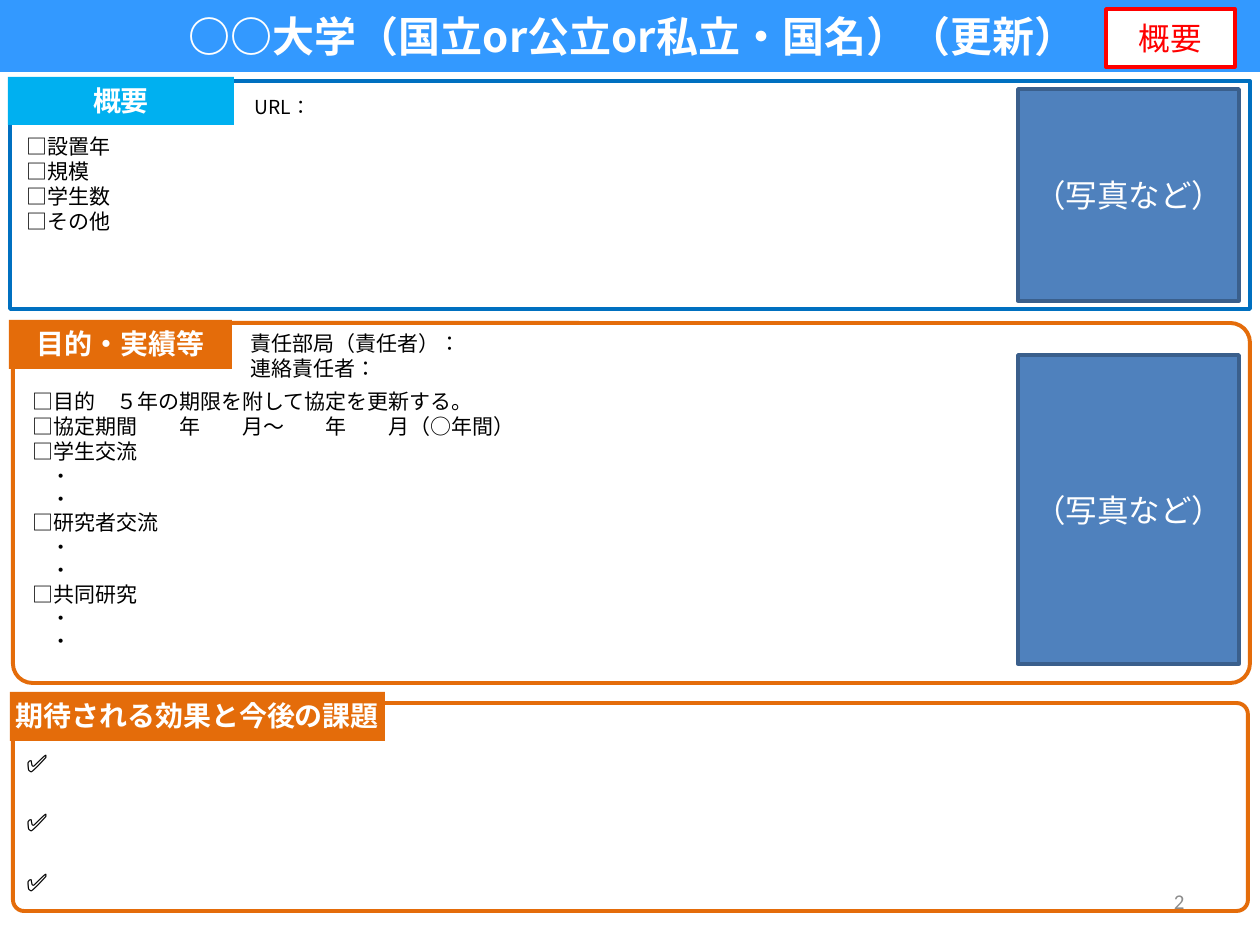
from dataclasses import dataclass

from lxml.etree import SubElement
from pptx import Presentation
from pptx.dml.color import RGBColor
from pptx.enum.lang import MSO_LANGUAGE_ID
from pptx.enum.shapes import MSO_SHAPE
from pptx.enum.text import MSO_ANCHOR, MSO_AUTO_SIZE, PP_ALIGN
from pptx.oxml.ns import qn
from pptx.util import Emu, Pt


@dataclass(frozen=True)
class Theme:
    latin: str = "Calibri"
    asian: str = "Noto Sans CJK JP"
    white: str = "FFFFFF"
    black: str = "000000"
    gray: str = "8C8C8C"
    red: str = "FF0000"
    banner: str = "3399FF"
    sky: str = "00B0F0"
    blue: str = "0070C0"
    orange: str = "E46C0A"
    photo: str = "4F81BD"
    edge: str = "3A5F8C"
    title: int = 24
    label: int = 18
    tab: int = 16
    check: int = 14
    body: int = 12
    small: int = 11


theme = Theme()
SCALE = 914400 / 126  # EMU in one px


def write(shape, text, size, color, bold=False, face=theme.asian,
          align=PP_ALIGN.LEFT, anchor=MSO_ANCHOR.TOP, wrap=True):
    frame = shape.text_frame
    frame.text = text
    frame.auto_size = MSO_AUTO_SIZE.NONE
    frame.word_wrap = wrap
    frame.vertical_anchor = anchor
    for para in frame.paragraphs:
        para.alignment = align
        for run in para.runs:
            font = run.font
            font.size, font.bold, font.name = Pt(size), bold, face
            font.color.rgb = RGBColor.from_string(color)
            font.language_id = MSO_LANGUAGE_ID.JAPANESE
            SubElement(font._element, qn("a:ea"), typeface=theme.asian)
    return frame


def draw(kind, box, fill=None, line=None, width=2.25):
    shape = slide.shapes.add_shape(kind, *[Emu(round(n * SCALE)) for n in box])
    shape.shadow.inherit = False
    if fill:
        shape.fill.solid()
        shape.fill.fore_color.rgb = RGBColor.from_string(fill)
    else:
        shape.fill.background()
    if line:
        shape.line.color.rgb = RGBColor.from_string(line)
        shape.line.width = Pt(width)
    else:
        shape.line.fill.background()
    return shape


deck = Presentation()
deck.slide_width, deck.slide_height = [Emu(round(n * SCALE)) for n in (1260, 945)]
slide = deck.slides.add_slide(deck.slide_layouts[5])

# Title banner
title = slide.shapes.title
title.left, title.top = Emu(0), Emu(0)
title.width, title.height = [Emu(round(n * SCALE)) for n in (1265, 72)]
title.fill.solid()
title.fill.fore_color.rgb = RGBColor.from_string(theme.banner)
write(title, "○○大学（国立or公立or私立・国名）（更新）", theme.title, theme.white,
      bold=True, align=PP_ALIGN.CENTER, anchor=MSO_ANCHOR.MIDDLE)

# Section frames, each with its heading tab
sections = [
    (MSO_SHAPE.RECTANGLE, (10, 81, 1240, 228), theme.blue,
     "概要", (8, 77, 226, 48), theme.sky),
    (MSO_SHAPE.ROUNDED_RECTANGLE, (13, 323, 1237, 360), theme.orange,
     "目的・実績等", (9, 320, 223, 49), theme.orange),
    (MSO_SHAPE.ROUNDED_RECTANGLE, (13, 703, 1235, 208), theme.orange,
     "期待される効果と今後の課題", (10, 692, 375, 49), theme.orange),
]
for kind, box, line, name, place, fill in sections:
    border = draw(kind, box, line=line)
    if kind == MSO_SHAPE.ROUNDED_RECTANGLE:
        border.adjustments[0] = 0.054
    tab = draw(MSO_SHAPE.RECTANGLE, place, fill)
    frame = write(tab, name, theme.tab, theme.white, bold=True,
                  align=PP_ALIGN.CENTER, wrap=False)
    frame.margin_left = frame.margin_right = Emu(round(5 * SCALE))

# Body text
goals = [
    "□目的　５年の期限を附して協定を更新する。",
    "□協定期間　　年　　月～　　年　　月（○年間）",
]
for topic in ("学生交流", "研究者交流", "共同研究"):
    goals += ["□" + topic, "　・", "　・"]
facts = ["□設置年", "□規模", "□学生数", "□その他"]
texts = [
    ((242, 89, 760, 37), ["URL："], theme.small),
    ((14, 127, 980, 115), facts, theme.body),
    ((238, 324, 760, 63), ["責任部局（責任者）：", "連絡責任者："], theme.body),
    ((20, 382, 656, 280), goals, theme.body),
    ((14, 742, 1226, 165), ["✅"] * 3, theme.check),
]
for box, lines, size in texts:
    area = slide.shapes.add_textbox(*[Emu(round(n * SCALE)) for n in box])
    frame = write(area, "\n".join(lines), size, theme.black)
    for para in frame.paragraphs:
        if para.text == "　・":
            para.runs[0].font.size = Pt(theme.small)
    if size == theme.check:
        for para in frame.paragraphs[1:]:
            para.space_before = Pt(17)

# Badge and photo areas
cards = [
    ((1106, 9, 129, 58), "概要", theme.white, theme.red, theme.red, theme.asian),
    ((1018, 89, 221, 212), "（写真など）", theme.photo, theme.edge, theme.white, theme.latin),
    ((1018, 355, 221, 309), "（写真など）", theme.photo, theme.edge, theme.white, theme.latin),
]
for box, text, fill, line, color, face in cards:
    card = draw(MSO_SHAPE.RECTANGLE, box, fill, line, 2)
    write(card, text, theme.label, color, face=face,
          align=PP_ALIGN.CENTER, anchor=MSO_ANCHOR.MIDDLE)

# Page number
page = slide.shapes.add_textbox(*[Emu(round(n * SCALE)) for n in (903, 876, 294, 50)])
write(page, "2", theme.body, theme.gray, face=theme.latin,
      align=PP_ALIGN.RIGHT, anchor=MSO_ANCHOR.MIDDLE)

deck.save("out.pptx")
